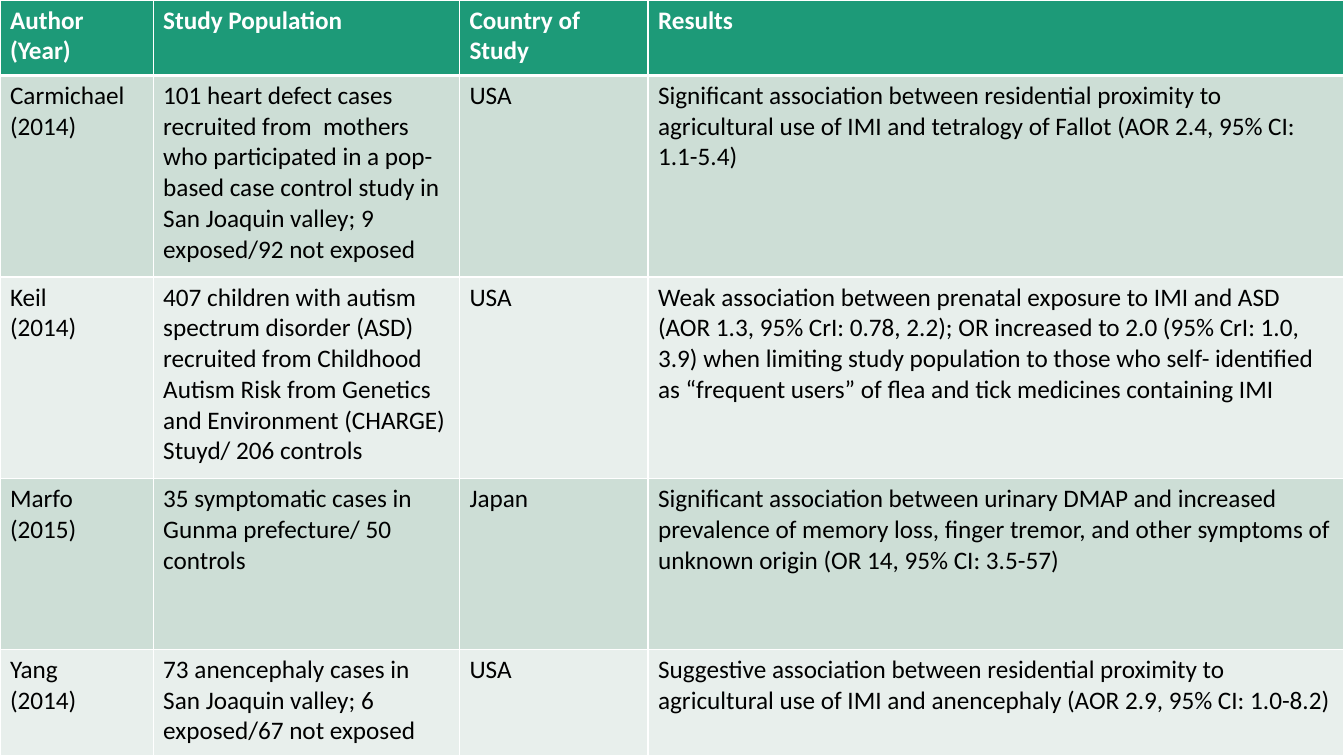
from dataclasses import dataclass

from lxml.etree import SubElement
from pptx import Presentation
from pptx.dml.color import RGBColor
from pptx.oxml.ns import qn
from pptx.util import Cm, Pt


@dataclass(frozen=True)
class Theme:
    font: str = "Calibri"
    size: int = 18
    header_fill: str = "1D9A78"
    header_text: str = "FFFFFF"
    body_text: str = "000000"
    bands: tuple = ("CDDED6", "E8EFEC")
    border: str = "FFFFFF"
    thin: int = 1
    thick: int = 3


COLUMN_WIDTHS = (3.86, 7.72, 4.75, 17.54)
ROW_HEIGHTS = (1.9, 5.08, 5.08, 4.3, 2.67)
STUDIES = (
    ("Author\n(Year)", "Study Population", "Country of Study", "Results"),
    ("Carmichael (2014)",
     "101 heart defect cases recruited from  mothers who participated in a "
     "pop-based case control study in San Joaquin valley; 9 exposed/92 not exposed",
     "USA",
     "Significant association between residential proximity to agricultural use "
     "of IMI and tetralogy of Fallot (AOR 2.4, 95% CI: 1.1-5.4)"),
    ("Keil\n(2014)",
     "407 children with autism spectrum disorder (ASD) recruited from Childhood "
     "Autism Risk from Genetics and Environment (CHARGE) Stuyd/ 206 controls",
     "USA",
     "Weak association between prenatal exposure to IMI and ASD (AOR 1.3, 95% "
     "CrI: 0.78, 2.2); OR increased to 2.0 (95% CrI: 1.0, 3.9) when limiting "
     "study population to those who self- identified as “frequent users” of "
     "flea and tick medicines containing IMI"),
    ("Marfo (2015)",
     "35 symptomatic cases in Gunma prefecture/ 50 controls",
     "Japan",
     "Significant association between urinary DMAP and increased prevalence of "
     "memory loss, finger tremor, and other symptoms of unknown origin "
     "(OR 14, 95% CI: 3.5-57)"),
    ("Yang\n(2014)",
     "73 anencephaly cases in San Joaquin valley; 6 exposed/67 not exposed",
     "USA",
     "Suggestive association between residential proximity to agricultural use "
     "of IMI and anencephaly (AOR 2.9, 95% CI: 1.0-8.2)"),
)


def write_text(tf, text, *, font, size, color, bold=False):
    """Fill a text frame, one paragraph per line of text."""
    tf.word_wrap = True
    for i, line in enumerate(text.split("\n")):
        p = tf.add_paragraph() if i else tf.paragraphs[0]
        r = p.add_run()
        r.text = line
        r.font.name, r.font.size, r.font.bold = font, Pt(size), bold
        r.font.color.rgb = RGBColor.from_string(color)


def set_borders(cell, color, widths):
    """Draw solid borders; widths maps L, R, T and B, in that order, to points."""
    tc_pr = cell._tc.get_or_add_tcPr()
    for side, width in widths.items():
        ln = SubElement(tc_pr, qn(f"a:ln{side}"), w=str(Pt(width)))
        fill = SubElement(ln, qn("a:solidFill"))
        SubElement(fill, qn("a:srgbClr"), val=color)


class SlideBuilder:
    def __init__(self, s, theme):
        self.s = s
        self.theme = theme

    def table(self, rows, widths, heights):
        frame = self.s.shapes.add_table(len(rows), len(widths), Cm(0), Cm(0),
                                        Cm(sum(widths)), Cm(sum(heights)))
        table = frame.table
        for column, width in zip(table.columns, widths):
            column.width = Cm(width)
        for i, (row, height) in enumerate(zip(table.rows, heights)):
            row.height = Cm(height)
            for cell, text in zip(row.cells, rows[i]):
                self.cell(cell, text, i)

    def cell(self, cell, text, row):
        t = self.theme
        header = row == 0
        set_borders(cell, t.border, {
            "L": t.thin,
            "R": t.thin,
            "T": t.thick if row == 1 else t.thin,
            "B": t.thick if header else t.thin,
        })
        fill = t.header_fill if header else t.bands[(row - 1) % 2]
        cell.fill.solid()
        cell.fill.fore_color.rgb = RGBColor.from_string(fill)
        write_text(cell.text_frame, text, font=t.font, size=t.size, bold=header,
                   color=t.header_text if header else t.body_text)


def main():
    prs = Presentation()
    prs.slide_width, prs.slide_height = Cm(33.87), Cm(19.05)
    blank = prs.slide_layouts[6]
    builder = SlideBuilder(prs.slides.add_slide(blank), Theme())
    builder.table(STUDIES, COLUMN_WIDTHS, ROW_HEIGHTS)
    prs.save("out.pptx")


if __name__ == "__main__":
    main()
